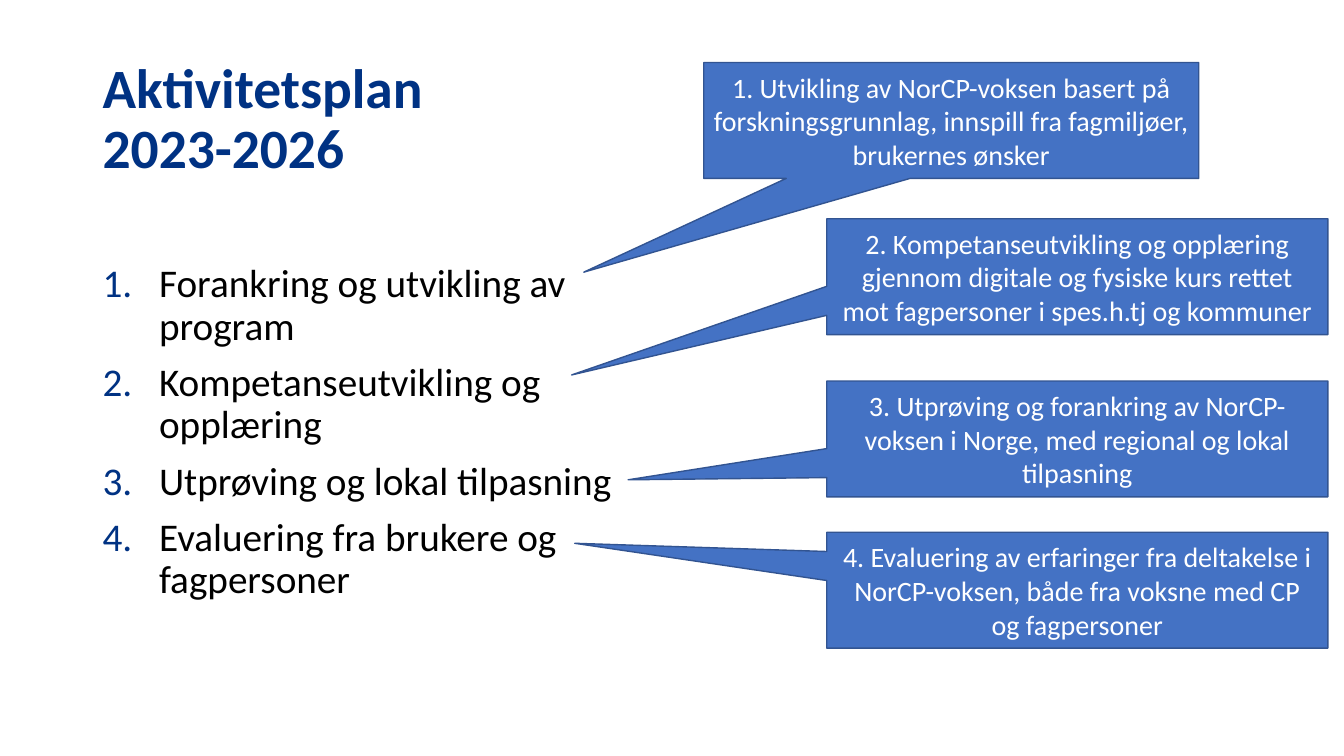
from dataclasses import dataclass
from typing import Any

import lxml.etree
import pptx
import pptx.dml.color
import pptx.enum.shapes
import pptx.enum.text
import pptx.oxml.ns
import pptx.presentation
import pptx.slide
import pptx.text.text
import pptx.util

EMU_PER_PX = 9144
COLORS = {
    "navy": "003283",
    "black": "000000",
    "white": "FFFFFF",
    "callout": "4472C4",
    "outline": "325491",
}
MIDDLE = pptx.enum.text.MSO_ANCHOR.MIDDLE
TITLE_FONT = {"name": "Calibri", "size": pptx.util.Pt(39.6), "bold": True}
LIST_FONT = {"name": "Calibri", "size": pptx.util.Pt(28)}
CALLOUT_FONT = {"name": "Calibri", "size": pptx.util.Pt(20)}
LIST_INDENT = 56
CALLOUT_HEIGHT = 115

ACTIVITIES = [
    "Forankring og utvikling av program",
    "Kompetanseutvikling og opplæring",
    "Utprøving og lokal tilpasning",
    "Evaluering fra brukere og fagpersoner",
]


@dataclass(frozen=True)
class Callout:
    left: int
    top: int
    width: int
    tip_x: int
    tip_y: int
    text: str


CALLOUTS = [
    Callout(698, 62, 491, 579, 270,
            "1. Utvikling av NorCP-voksen basert på forskningsgrunnlag, "
            "innspill fra fagmiljøer, brukernes ønsker"),
    Callout(820, 217, 497, 567, 372,
            "2. Kompetanseutvikling og opplæring gjennom digitale og fysiske "
            "kurs rettet mot fagpersoner i spes.h.tj og kommuner"),
    Callout(820, 378, 497, 623, 476,
            "3. Utprøving og forankring av NorCP-voksen i Norge, "
            "med regional og lokal tilpasning"),
    Callout(820, 528, 497, 570, 539,
            "4. Evaluering av erfaringer fra deltakelse i NorCP-voksen, "
            "både fra voksne med CP\vog fagpersoner"),
]


def px(length: int) -> pptx.util.Emu:
    return pptx.util.Emu(length * EMU_PER_PX)


def rgb(name: str) -> pptx.dml.color.RGBColor:
    return pptx.dml.color.RGBColor.from_string(COLORS[name])


def set_attributes(target: Any, values: dict[str, Any]) -> None:
    for name, value in values.items():
        setattr(target, name, value)


def write_text(paragraph: pptx.text.text._Paragraph, text: str,
               font: dict[str, Any], color: str) -> None:
    paragraph.text = text
    for run in paragraph.runs:
        set_attributes(run.font, font)
        run.font.color.rgb = rgb(color)


def add_number(paragraph: pptx.text.text._Paragraph) -> None:
    properties = paragraph._p.get_or_add_pPr()
    properties.set("marL", str(px(LIST_INDENT)))
    properties.set("indent", str(-px(LIST_INDENT)))
    qualified = pptx.oxml.ns.qn
    bullet_color = lxml.etree.SubElement(properties, qualified("a:buClr"))
    lxml.etree.SubElement(bullet_color, qualified("a:srgbClr"), val=COLORS["navy"])
    lxml.etree.SubElement(properties, qualified("a:buFont"), typeface="+mj-lt")
    lxml.etree.SubElement(properties, qualified("a:buAutoNum"), type="arabicPeriod")


def add_title(slide: pptx.slide.Slide) -> None:
    frame = slide.shapes.add_textbox(px(92), px(54), px(1150), px(131)).text_frame
    set_attributes(frame, {"word_wrap": True, "vertical_anchor": MIDDLE})
    paragraph = frame.paragraphs[0]
    paragraph.line_spacing = 0.9
    write_text(paragraph, "Aktivitetsplan\v2023-2026", TITLE_FONT, "navy")


def add_activities(slide: pptx.slide.Slide) -> None:
    frame = slide.shapes.add_textbox(px(92), px(257), px(567), px(386)).text_frame
    frame.word_wrap = True
    for index, activity in enumerate(ACTIVITIES):
        paragraph = frame.add_paragraph() if index else frame.paragraphs[0]
        add_number(paragraph)
        space_before = pptx.util.Pt(10 if index else 0)
        set_attributes(paragraph, {"line_spacing": 0.9, "space_before": space_before})
        write_text(paragraph, activity, LIST_FONT, "black")


def add_callout(slide: pptx.slide.Slide, callout: Callout) -> None:
    shape = slide.shapes.add_shape(
        pptx.enum.shapes.MSO_SHAPE.RECTANGULAR_CALLOUT,
        px(callout.left), px(callout.top), px(callout.width), px(CALLOUT_HEIGHT))
    shape.adjustments[0] = (callout.tip_x - callout.left) / callout.width - 0.5
    shape.adjustments[1] = (callout.tip_y - callout.top) / CALLOUT_HEIGHT - 0.5
    shape.shadow.inherit = False
    shape.fill.solid()
    shape.fill.fore_color.rgb = rgb("callout")
    shape.line.color.rgb = rgb("outline")
    shape.line.width = pptx.util.Pt(1)
    frame = shape.text_frame
    set_attributes(frame, {"word_wrap": True, "vertical_anchor": MIDDLE})
    paragraph = frame.paragraphs[0]
    paragraph.alignment = pptx.enum.text.PP_ALIGN.CENTER
    write_text(paragraph, callout.text, CALLOUT_FONT, "white")


def main() -> None:
    presentation = pptx.Presentation()
    set_attributes(presentation, {"slide_width": px(1333), "slide_height": px(750)})
    slide = presentation.slides.add_slide(presentation.slide_layouts[6])
    add_title(slide)
    add_activities(slide)
    for callout in CALLOUTS:
        add_callout(slide, callout)
    presentation.save("out.pptx")


if __name__ == "__main__":
    main()
